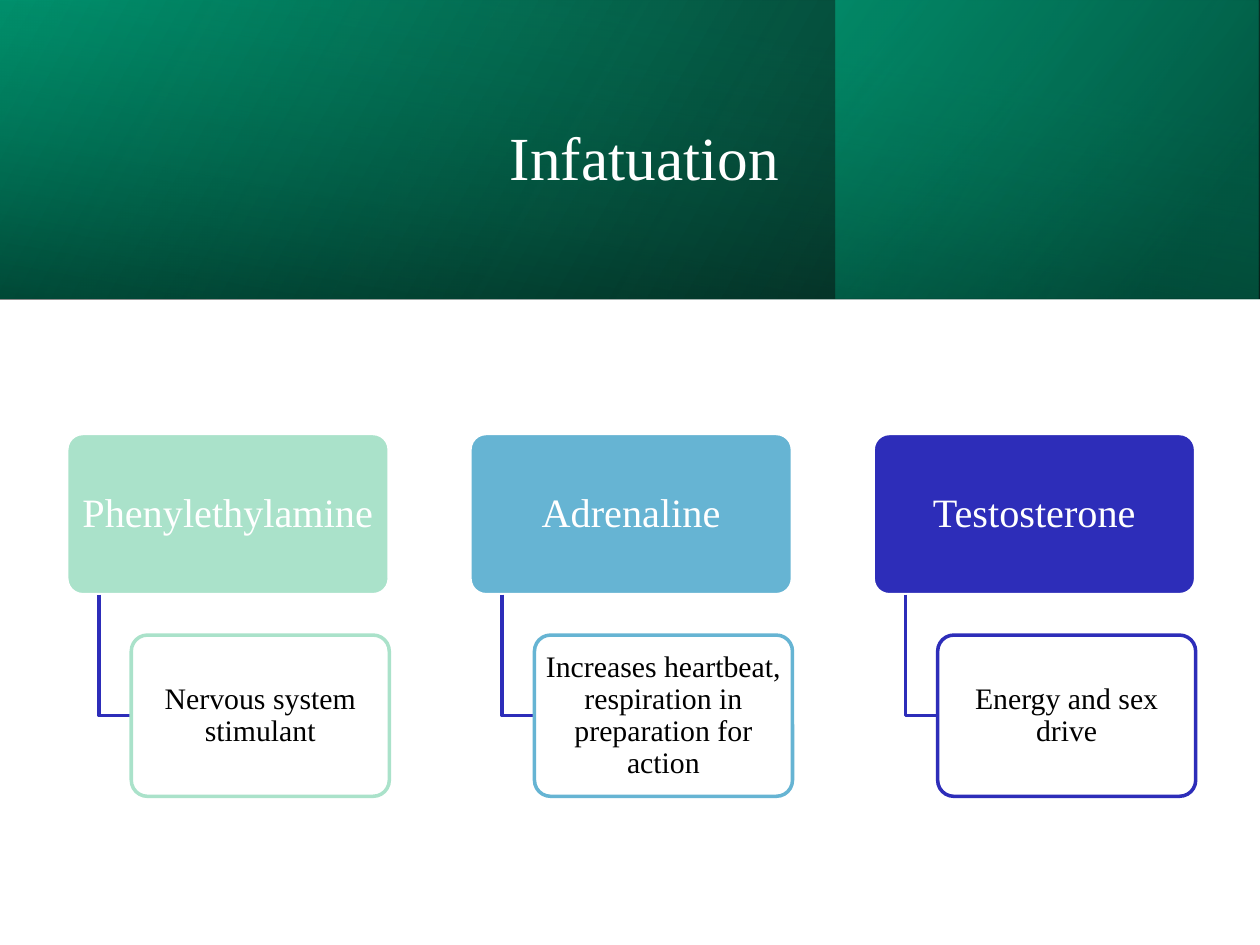
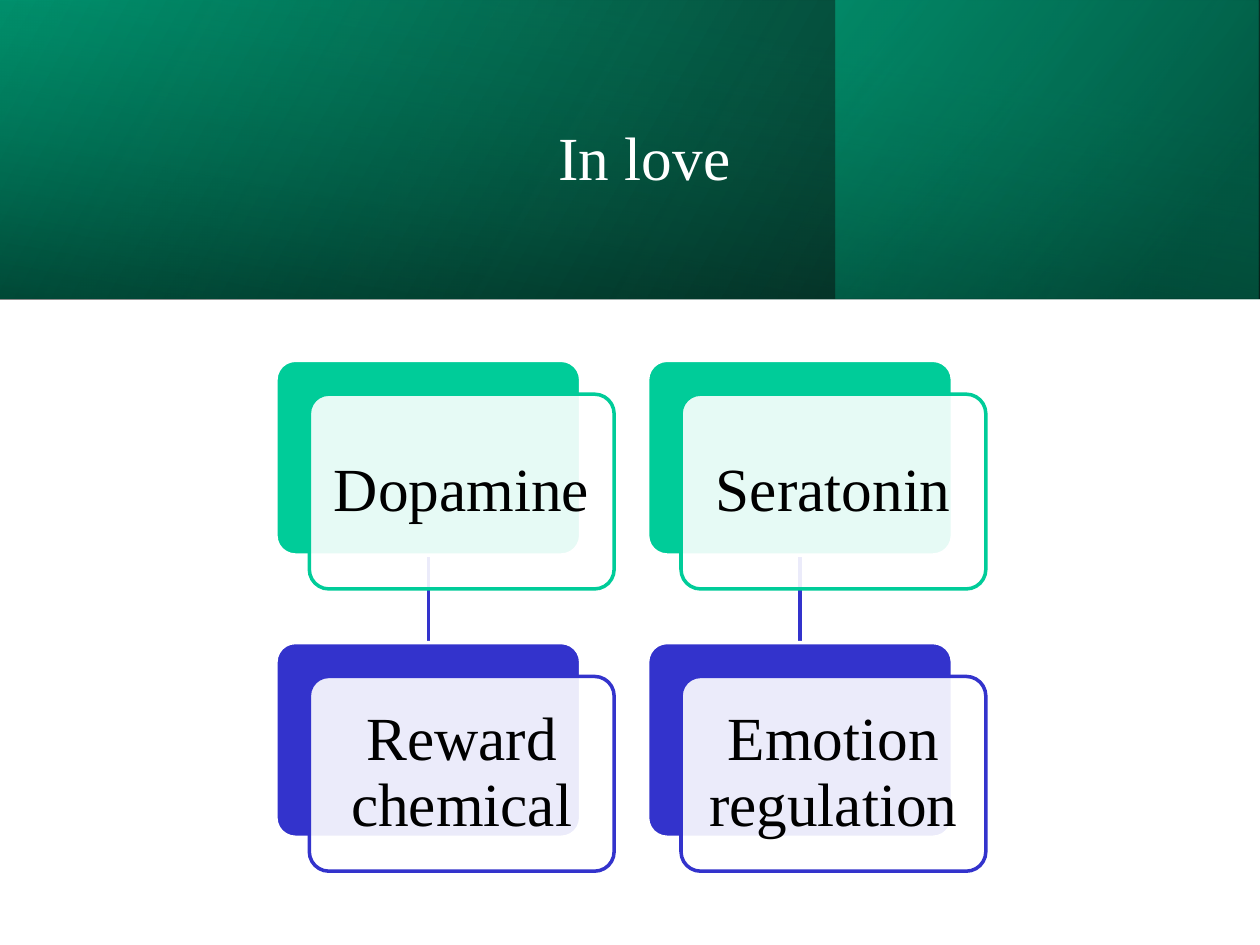
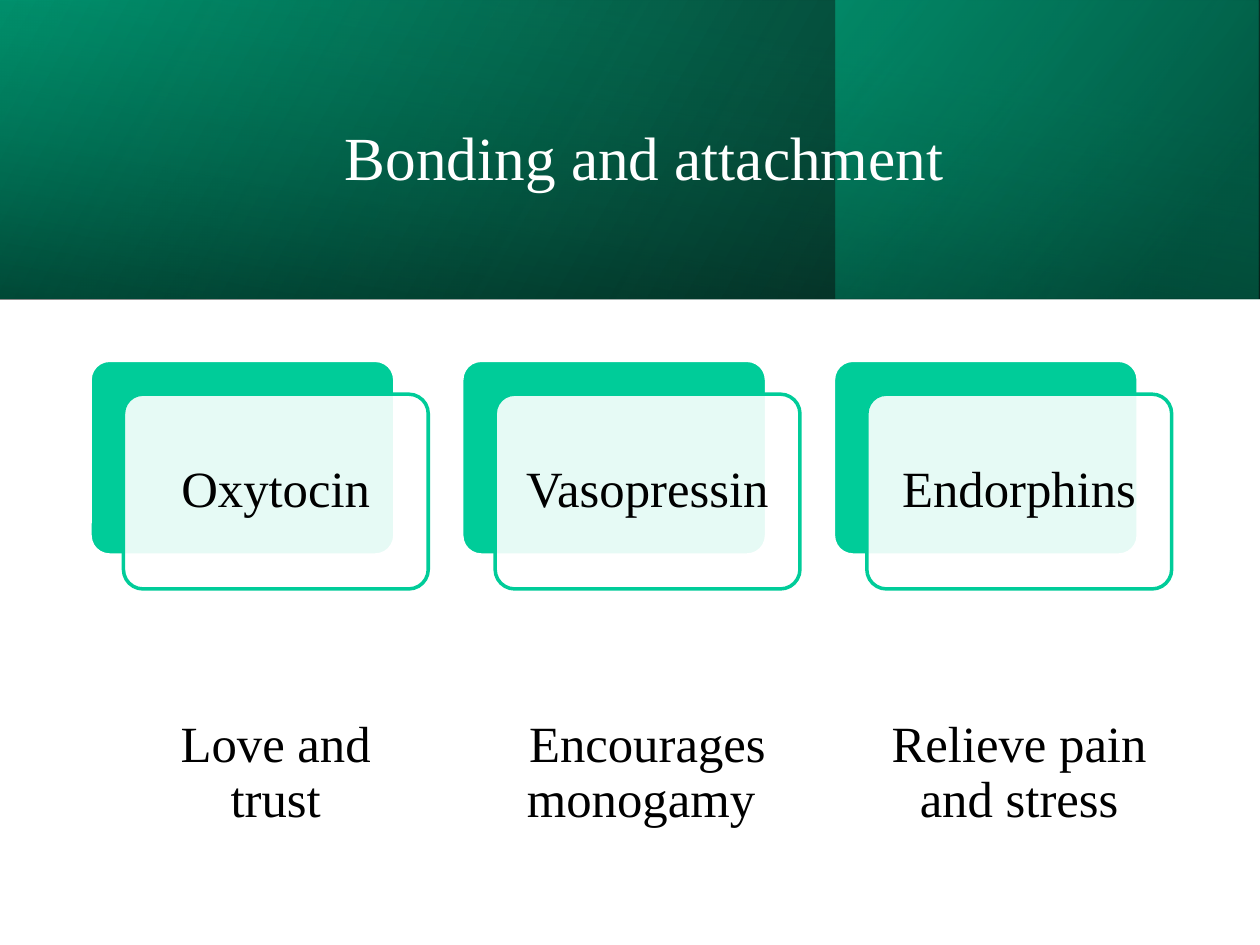
from dataclasses import dataclass

from lxml.etree import SubElement
from pptx import Presentation
from pptx.dml.color import RGBColor
from pptx.enum.shapes import MSO_CONNECTOR, MSO_SHAPE
from pptx.enum.text import MSO_ANCHOR, PP_ALIGN
from pptx.oxml.ns import qn
from pptx.util import Inches, Pt


@dataclass(frozen=True)
class Theme:
    font: str = "Times New Roman"
    white: str = "FFFFFF"
    black: str = "000000"
    green: str = "00CC99"
    deep_green: str = "009973"
    dark_green: str = "00664D"
    mint: str = "AAE2CA"
    sky: str = "66B4D3"
    indigo: str = "2D2DB9"
    blue: str = "3333CC"
    title_size: int = 35
    head_size: int = 23
    detail_size: int = 17
    line_width: int = 2
    line_spacing: float = 0.9
    corner: float = 0.1
    veil: int = 90


THEME = Theme()


@dataclass(frozen=True)
class Box:
    """A rectangle in inches."""
    left: float
    top: float
    width: float
    height: float

    def share(self, x, y, width, height):
        """Return an inner box given in shares of this one."""
        return Box(self.left + x * self.width, self.top + y * self.height,
                   width * self.width, height * self.height)

    def columns(self, count):
        return [self.share(i / count, 0, 1 / count, 1) for i in range(count)]

    def rows(self, count):
        return [self.share(0, i / count, 1, 1 / count) for i in range(count)]

    def emu(self):
        return [Inches(v) for v in (self.left, self.top, self.width, self.height)]


SLIDE = Box(0, 0, 10, 7.5)
HEADER = Box(0, 0, 10, 2.37)
TITLE = Box(1.13, 0.38, 7.97, 1.72)
BRANCHES = Box(0.53, 3.44, 9.6, 2.88)
LAYERS_TOP = 2.86
LAYERS_CENTRE = 5.14
LAYER_CELL = (2.95, 2.24)

# Box, rotation, gradient angle, stops of (position, colour, opacity)
BANDS = [
    (HEADER, 0, 330, [(0, THEME.black, 96), (100, THEME.deep_green, 100)]),
    (Box(6.63, 0, 3.36, 2.37), 0, 320,
     [(19, THEME.dark_green, 68), (100, THEME.green, 48)]),
    (Box(3.81, -3.81, 2.37, 10), 270, 350,
     [(23, THEME.deep_green, 16), (99, THEME.black, 45)]),
]


def rgb(colour):
    return RGBColor.from_string(colour)


def set_opacity(colour_element, percent):
    SubElement(colour_element, qn("a:alpha"), val=str(percent * 1000))


def fill_gradient(shape, angle, stops):
    shape.fill.background()
    properties = shape.element.spPr
    no_fill = properties.find(qn("a:noFill"))
    gradient = SubElement(properties, qn("a:gradFill"), rotWithShape="1")
    properties.replace(no_fill, gradient)
    stop_list = SubElement(gradient, qn("a:gsLst"))
    for position, colour, opacity in stops:
        stop = SubElement(stop_list, qn("a:gs"), pos=str(position * 1000))
        set_opacity(SubElement(stop, qn("a:srgbClr"), val=colour), opacity)
    SubElement(gradient, qn("a:lin"), ang=str(angle * 60000), scaled="0")


def style_line(line, colour):
    line.color.rgb = rgb(colour)
    line.width = Pt(THEME.line_width)


def write(shape, text, size, colour, insets=None, spacing=None):
    frame = shape.text_frame
    frame.text = text
    frame.word_wrap = True
    frame.vertical_anchor = MSO_ANCHOR.MIDDLE
    if insets:
        across, down = (Inches(inset) for inset in insets)
        frame.margin_left = frame.margin_right = across
        frame.margin_top = frame.margin_bottom = down
    paragraph = frame.paragraphs[0]
    paragraph.alignment = PP_ALIGN.CENTER
    paragraph.line_spacing = spacing
    font = paragraph.runs[0].font
    font.name = THEME.font
    font.size = Pt(size)
    font.color.rgb = rgb(colour)


def add_card(slide, box, fill, outline, opacity=100):
    card = slide.shapes.add_shape(MSO_SHAPE.ROUNDED_RECTANGLE, *box.emu())
    card.adjustments[0] = THEME.corner
    card.shadow.inherit = False
    card.fill.solid()
    card.fill.fore_color.rgb = rgb(fill)
    if opacity < 100:
        set_opacity(card.element.spPr.find(qn("a:solidFill"))[0], opacity)
    style_line(card.line, outline)
    return card


def add_header(slide, title):
    heading = slide.shapes.title
    for box, rotation, angle, stops in BANDS:
        band = slide.shapes.add_shape(MSO_SHAPE.RECTANGLE, *box.emu())
        band.shadow.inherit = False
        band.rotation = rotation
        band.element.spPr.xfrm.set("flipH", "1")
        fill_gradient(band, angle, stops)
        band.line.fill.background()
        heading.element.addprevious(band.element)
    heading.left, heading.top, heading.width, heading.height = TITLE.emu()
    write(heading, title, THEME.title_size, THEME.white)


def add_elbow(slide, box):
    """Draw a line down the left side of the box and along its bottom."""
    left, top, width, height = box.emu()
    builder = slide.shapes.build_freeform(left, top)
    builder.add_line_segments(
        [(left, top + height), (left + width, top + height)], close=False)
    elbow = builder.convert_to_shape()
    elbow.shadow.inherit = False
    elbow.fill.background()
    style_line(elbow.line, THEME.indigo)


def add_branch(slide, cell, hormone, effect, accent):
    head = add_card(slide, cell.share(0, 0, 0.8, 4 / 9), accent, THEME.white)
    write(head, hormone, THEME.head_size, THEME.white, (0.05, 0.03), THEME.line_spacing)
    add_elbow(slide, cell.share(0.08, 4 / 9, 0.08, 3 / 9))
    detail = add_card(slide, cell.share(0.16, 5 / 9, 0.64, 4 / 9),
                      THEME.white, accent, THEME.veil)
    write(detail, effect, THEME.detail_size, THEME.black, (0.04, 0.02), THEME.line_spacing)


def add_layered_card(slide, cell, text, accent, size, inset):
    """Draw a solid card with a veiled text card in front; return the solid one."""
    back = add_card(slide, cell.share(0, 0, 0.82, 0.69), accent, THEME.white)
    front = add_card(slide, cell.share(0.09, 0.12, 0.82, 0.69),
                     THEME.white, accent, THEME.veil)
    write(front, text, size, THEME.black, (inset, inset), THEME.line_spacing)
    return back


def link_cards(slide, upper, lower, colour):
    """Join two cards by a line that runs behind both."""
    link = slide.shapes.add_connector(MSO_CONNECTOR.STRAIGHT, 0, 0, 0, 0)
    link.begin_connect(upper, 2)
    link.end_connect(lower, 0)
    style_line(link.line, colour)
    SubElement(link.element.spPr, qn("a:effectLst"))
    upper.element.addprevious(link.element)


def add_titled_slide(deck, title):
    slide = deck.slides.add_slide(deck.slide_layouts[5])
    add_header(slide, title)
    return slide


def add_branch_slide(deck, title, branches):
    slide = add_titled_slide(deck, title)
    for cell, branch in zip(BRANCHES.columns(len(branches)), branches):
        add_branch(slide, cell, *branch)


def add_layer_slide(deck, title, pairs, effect_colour, size, inset):
    slide = add_titled_slide(deck, title)
    cell_width, cell_height = LAYER_CELL
    width = cell_width * len(pairs)
    region = Box(LAYERS_CENTRE - width / 2, LAYERS_TOP, width, 2 * cell_height)
    for column, pair in zip(region.columns(len(pairs)), pairs):
        hormone, effect = [
            add_layered_card(slide, cell, text, accent, size, inset)
            for cell, text, accent in zip(column.rows(2), pair, (THEME.green, effect_colour))
        ]
        link_cards(slide, hormone, effect, effect_colour)


def main():
    deck = Presentation()
    deck.slide_width, deck.slide_height = Inches(SLIDE.width), Inches(SLIDE.height)
    add_branch_slide(deck, "Infatuation", [
        ("Phenylethylamine", "Nervous system stimulant", THEME.mint),
        ("Adrenaline", "Increases heartbeat, respiration in preparation for action",
         THEME.sky),
        ("Testosterone", "Energy and sex drive", THEME.indigo),
    ])
    add_layer_slide(deck, "In love", [
        ("Dopamine", "Reward chemical"),
        ("Seratonin", "Emotion regulation"),
    ], THEME.blue, size=35, inset=0.14)
    add_layer_slide(deck, "Bonding and attachment", [
        ("Oxytocin", "Love and trust"),
        ("Vasopressin", "Encourages monogamy "),
        ("Endorphins", "Relieve pain and stress"),
    ], THEME.white, size=29, inset=0.12)
    deck.save("out.pptx")


if __name__ == "__main__":
    main()
